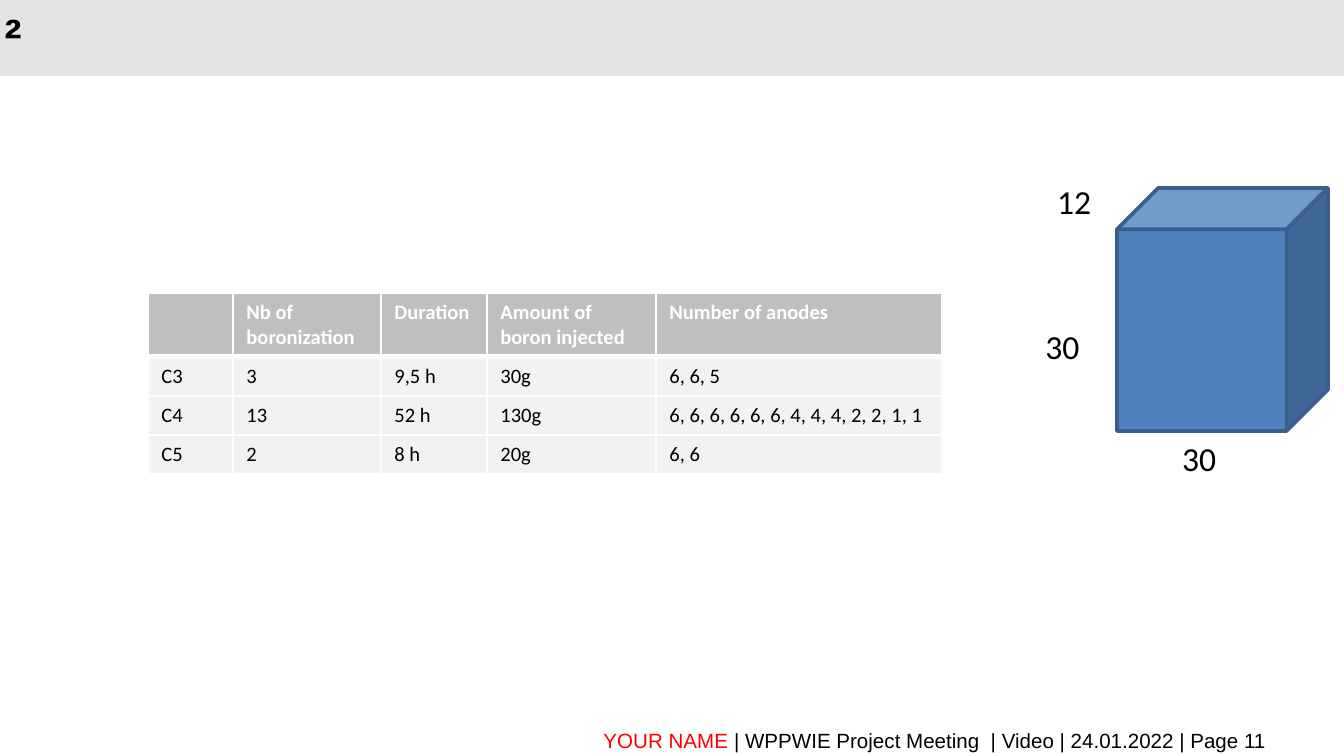
from lxml.etree import SubElement
from pptx import Presentation
from pptx.dml.color import RGBColor
from pptx.enum.shapes import MSO_SHAPE as SHAPE
from pptx.enum.text import MSO_ANCHOR as ANCHOR, PP_ALIGN as ALIGN
from pptx.oxml.ns import qn
from pptx.util import Pt

SLIDE_W, SLIDE_H = 1344, 756
SCALE = 9144000 / SLIDE_W  # EMU per px

BLACK = RGBColor(0x00, 0x00, 0x00)
WHITE = RGBColor(0xFF, 0xFF, 0xFF)
RED = RGBColor(0xFF, 0x00, 0x00)
BAND = RGBColor(0xE3, 0xE3, 0xE3)
HEADER = RGBColor(0xBF, 0xBF, 0xBF)
ROW = RGBColor(0xF2, 0xF2, 0xF2)
BLUE = RGBColor(0x4F, 0x81, 0xBD)
DARK_BLUE = RGBColor(0x3A, 0x5F, 0x8C)

COLUMNS = [85, 148, 106, 169, 286]
ROWS = [
    ["", "Nb of boronization", "Duration", "Amount of boron injected",
     "Number of anodes"],
    ["C3", "3", "9,5 h", "30g", "6, 6, 5"],
    ["C4", "13", "52 h", "130g", "6, 6, 6, 6, 6, 6, 4, 4, 4, 2, 2, 1, 1"],
    ["C5", "2", "8 h", "20g", "6, 6"],
]
# Cube edge lengths: text, left, top
DIMENSIONS = [("30", 1169, 431), ("30", 1032, 319), ("12", 1044, 174)]


def px(n):
    return round(n * SCALE)


def box(*lengths):
    return [px(n) for n in lengths]


def add_run(p, text, size=11, font="Calibri", color=BLACK, bold=False):
    r = p.add_run()
    r.text = text
    r.font.size = Pt(size)
    r.font.name = font
    r.font.color.rgb = color
    r.font.bold = bold


def add_shape(s, kind, place, fill, line=None):
    sp = s.shapes.add_shape(kind, *box(*place))
    sp.shadow.inherit = False
    sp.fill.solid()
    sp.fill.fore_color.rgb = fill
    if line is None:
        sp.line.fill.background()
    else:
        sp.line.color.rgb = line
        sp.line.width = Pt(2)
    return sp


def add_text_box(s, place):
    tf = s.shapes.add_textbox(*box(*place)).text_frame
    tf.word_wrap = True
    return tf.paragraphs[0]


def set_title(s, text):
    title = s.shapes.title
    title.left, title.top, title.width, title.height = box(-9, 12, 1109, 51)
    tf = title.text_frame
    tf.vertical_anchor = ANCHOR.MIDDLE
    p = tf.paragraphs[0]
    p.alignment = ALIGN.LEFT
    p.line_spacing = Pt(32)
    add_run(p, text, size=28, font="Arial", bold=True)


def set_borders(cell, top, bottom):
    tc_pr = cell._tc.get_or_add_tcPr()
    for side, width in zip("LRTB", (1, 1, top, bottom)):
        ln = SubElement(tc_pr, qn(f"a:ln{side}"), w=str(Pt(width)))
        fill = SubElement(ln, qn("a:solidFill"))
        SubElement(fill, qn("a:srgbClr"), val=str(WHITE))


def add_table(s, left, top):
    heights = [64] + [39] * (len(ROWS) - 1)
    place = box(left, top, sum(COLUMNS), sum(heights))
    table = s.shapes.add_table(len(ROWS), len(COLUMNS), *place).table
    for column, width in zip(table.columns, COLUMNS):
        column.width = px(width)
    for i, texts in enumerate(ROWS):
        table.rows[i].height = px(heights[i])
        header = i == 0
        for j, text in enumerate(texts):
            cell = table.cell(i, j)
            # The line under the header is thicker than the others
            set_borders(cell, top=3 if i == 1 else 1, bottom=3 if header else 1)
            cell.fill.solid()
            cell.fill.fore_color.rgb = HEADER if header else ROW
            p = cell.text_frame.paragraphs[0]
            p.font.size = Pt(11)
            if text:
                add_run(p, text, color=WHITE if header else BLACK, bold=header)


def main():
    prs = Presentation()
    prs.slide_width, prs.slide_height = box(SLIDE_W, SLIDE_H)
    s = prs.slides.add_slide(prs.slide_layouts[5])

    # Title band, kept behind the title
    band = add_shape(s, SHAPE.RECTANGLE, (0, 0, SLIDE_W, 76), BAND)
    s.shapes.title._element.addprevious(band._element)
    set_title(s, "²")

    # Footer
    p = add_text_box(s, (69, 721, 1211, 30))
    p.alignment = ALIGN.RIGHT
    add_run(p, "YOUR NAME ", font="Arial", color=RED)
    add_run(p, "| WPPWIE Project Meeting  | Video | 24.01.2022 | Page 11",
            font="Arial")

    # Boronization table
    add_table(s, 148, 293)

    # Cube with its dimensions
    cube = add_shape(s, SHAPE.CUBE, (1117, 188, 211, 243), BLUE, DARK_BLUE)
    cube.adjustments[0] = 0.196
    for text, left, top in DIMENSIONS:
        add_run(add_text_box(s, (left, top, 110, 54)), text, size=18)

    prs.save("out.pptx")


if __name__ == "__main__":
    main()
